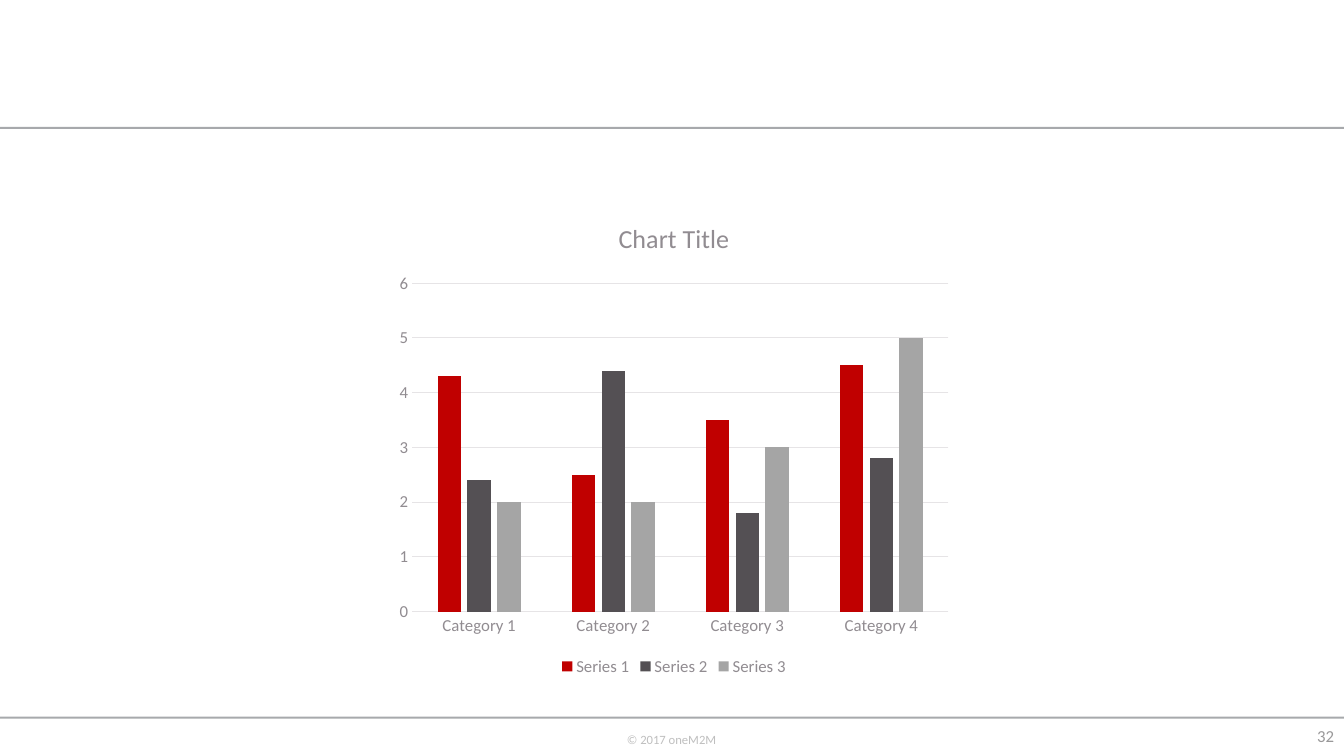
"""Build a slide with a clustered column chart between two rules and a footer."""
from dataclasses import dataclass

import pptx
import pptx.chart.axis
import pptx.chart.chart
import pptx.chart.data
import pptx.dml.color
import pptx.dml.fill
import pptx.enum.chart
import pptx.enum.shapes
import pptx.enum.text
import pptx.slide
import pptx.text.text
import pptx.util

WIDTH = pptx.util.Inches(13.33)
HEIGHT = pptx.util.Inches(7.5)


@dataclass(frozen=True)
class Theme:
    face: str = "Calibri"
    rule: str = "A7A9AC"
    copyright: str = "BFBFBF"
    page: str = "999899"
    label: str = "918C91"
    grid: str = "E6E4E6"
    title_size: float = 18.6
    label_size: float = 12
    copyright_size: float = 9
    grid_weight: float = 0.75


@dataclass(frozen=True)
class Area:
    """Position and size as shares of the slide's width and height."""

    left: float
    top: float
    width: float
    height: float

    def box(self) -> tuple[int, int, int, int]:
        return (int(self.left * WIDTH), int(self.top * HEIGHT),
                int(self.width * WIDTH), int(self.height * HEIGHT))


@dataclass(frozen=True)
class Series:
    name: str
    values: tuple[float, ...]
    color: str


@dataclass(frozen=True)
class Note:
    text: str
    area: Area
    size: float
    color: str
    wraps: bool
    align: pptx.enum.text.PP_ALIGN
    anchor: pptx.enum.text.MSO_ANCHOR


THEME = Theme()
RULES = [Area(0, top / 7.5, 1, 0.02 / 7.5) for top in (1.26, 7.11)]
CHART_AREA = Area(3.85 / 13.33, 1.99 / 7.5, 5.67 / 13.33, 4.76 / 7.5)
CATEGORIES = [f"Category {number}" for number in range(1, 5)]
SERIES = [
    Series("Series 1", (4.3, 2.5, 3.5, 4.5), "C00000"),
    Series("Series 2", (2.4, 4.4, 1.8, 2.8), "545054"),
    Series("Series 3", (2, 2, 3, 5), "A5A5A5"),
]
NOTES = [
    Note("© 2017 oneM2M", Area(6.12 / 13.33, 7.21 / 7.5, 1.1 / 13.33, 0.4 / 7.5),
         THEME.copyright_size, THEME.copyright, False,
         pptx.enum.text.PP_ALIGN.LEFT, pptx.enum.text.MSO_ANCHOR.TOP),
    Note("32", Area(12.79 / 13.33, 7.1 / 7.5, 0.54 / 13.33, 0.4 / 7.5),
         THEME.label_size, THEME.page, True,
         pptx.enum.text.PP_ALIGN.RIGHT, pptx.enum.text.MSO_ANCHOR.MIDDLE),
]


def paint(fill: pptx.dml.fill.FillFormat, color: str) -> None:
    fill.solid()
    fill.fore_color.rgb = pptx.dml.color.RGBColor.from_string(color)


def style(font: pptx.text.text.Font, size: float, color: str) -> None:
    font.name = THEME.face
    font.size = pptx.util.Pt(size)
    font.bold = False
    font.color.rgb = pptx.dml.color.RGBColor.from_string(color)


def draw_rule(slide: pptx.slide.Slide, area: Area) -> None:
    rule = slide.shapes.add_shape(pptx.enum.shapes.MSO_SHAPE.RECTANGLE, *area.box())
    rule.shadow.inherit = False
    paint(rule.fill, THEME.rule)
    rule.line.fill.background()


def draw_note(slide: pptx.slide.Slide, note: Note) -> None:
    frame = slide.shapes.add_textbox(*note.area.box()).text_frame
    frame.word_wrap = note.wraps
    frame.vertical_anchor = note.anchor
    paragraph = frame.paragraphs[0]
    paragraph.text = note.text
    paragraph.alignment = note.align
    style(paragraph.font, note.size, note.color)


def style_axis(axis: pptx.chart.axis._BaseAxis) -> None:
    axis.major_tick_mark = pptx.enum.chart.XL_TICK_MARK.NONE
    axis.minor_tick_mark = pptx.enum.chart.XL_TICK_MARK.NONE
    style(axis.tick_labels.font, THEME.label_size, THEME.label)


def draw_chart(slide: pptx.slide.Slide) -> None:
    figures = pptx.chart.data.CategoryChartData()
    figures.categories = CATEGORIES
    for entry in SERIES:
        figures.add_series(entry.name, entry.values)
    chart: pptx.chart.chart.Chart = slide.shapes.add_chart(
        pptx.enum.chart.XL_CHART_TYPE.COLUMN_CLUSTERED, *CHART_AREA.box(), figures).chart
    style(chart.font, THEME.label_size, THEME.label)

    heading = chart.chart_title.text_frame.paragraphs[0]
    heading.text = "Chart Title"
    style(heading.font, THEME.title_size, THEME.label)
    chart.chart_title.include_in_layout = False

    chart.has_legend = True
    chart.legend.position = pptx.enum.chart.XL_LEGEND_POSITION.BOTTOM
    chart.legend.include_in_layout = False
    style(chart.legend.font, THEME.label_size, THEME.label)

    categories, values = chart.category_axis, chart.value_axis
    style_axis(categories)
    style_axis(values)
    values.minimum_scale, values.maximum_scale, values.major_unit = 0, 6, 1
    values.format.line.fill.background()
    for line in (categories.format.line, values.major_gridlines.format.line):
        paint(line.fill, THEME.grid)
        line.width = pptx.util.Pt(THEME.grid_weight)

    columns = chart.plots[0]
    columns.gap_width = 219
    columns.overlap = -27
    columns.vary_by_categories = False
    for column, entry in zip(columns.series, SERIES):
        paint(column.format.fill, entry.color)


def main() -> None:
    deck = pptx.Presentation()
    deck.slide_width, deck.slide_height = WIDTH, HEIGHT
    slide = deck.slides.add_slide(deck.slide_layouts[6])
    for area in RULES:
        draw_rule(slide, area)
    draw_chart(slide)
    for note in NOTES:
        draw_note(slide, note)
    deck.save("out.pptx")


if __name__ == "__main__":
    main()
